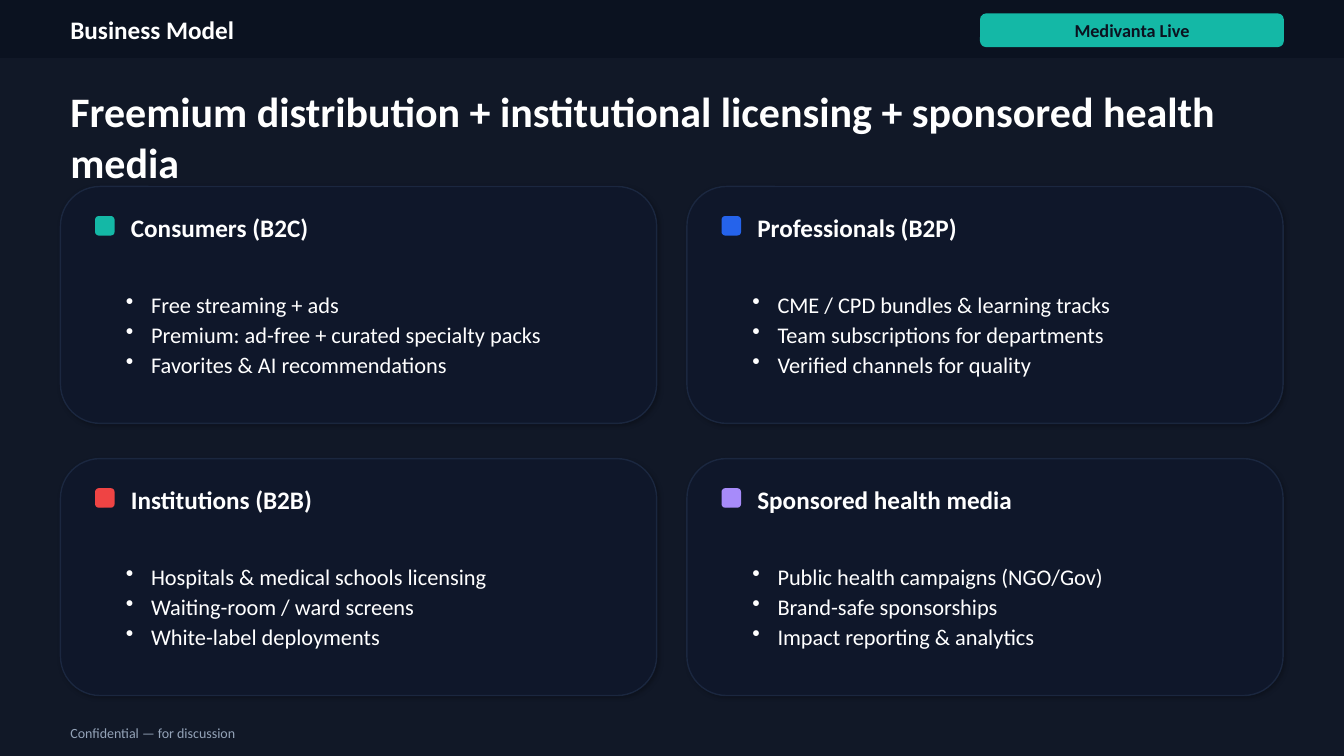
from dataclasses import dataclass

from lxml import etree
from pptx import Presentation
from pptx.dml.color import RGBColor
from pptx.enum.shapes import MSO_SHAPE
from pptx.enum.text import MSO_ANCHOR, PP_ALIGN
from pptx.oxml.ns import qn
from pptx.util import Pt

RECT = MSO_SHAPE.RECTANGLE
ROUND = MSO_SHAPE.ROUNDED_RECTANGLE
MIDDLE = MSO_ANCHOR.MIDDLE
LEFT = PP_ALIGN.LEFT
CENTER = PP_ALIGN.CENTER


@dataclass(frozen=True)
class Theme:
    """Font, colours and type sizes of the slide."""
    font: str = "Calibri"
    bar: str = "0B1220"
    back: str = "111827"
    card: str = "0F172A"
    edge: str = "22314D"
    shade: str = "000000"
    white: str = "FFFFFF"
    muted: str = "94A3B8"
    teal: str = "14B8A6"
    blue: str = "2563EB"
    red: str = "EF4444"
    violet: str = "A78BFA"
    title: int = 30
    head: int = 18
    body: int = 16
    tag: int = 13
    note: int = 10


THEME = Theme()
WIDTH, HEIGHT = 960, 540
BAR = 41.76
EDGE = 43.2
SPAN = 873.36
CARD_W, CARD_H = 425.88, 169.2
CARD_TOP = 133.2
STEP_X, STEP_Y = CARD_W + 21.6, CARD_H + 25.2
INDENT = 18

CARDS = [
    ("Consumers (B2C)", THEME.teal,
     ["Free streaming + ads",
      "Premium: ad-free + curated specialty packs",
      "Favorites & AI recommendations"]),
    ("Professionals (B2P)", THEME.blue,
     ["CME / CPD bundles & learning tracks",
      "Team subscriptions for departments",
      "Verified channels for quality"]),
    ("Institutions (B2B)", THEME.red,
     ["Hospitals & medical schools licensing",
      "Waiting-room / ward screens",
      "White-label deployments"]),
    ("Sponsored health media", THEME.violet,
     ["Public health campaigns (NGO/Gov)",
      "Brand-safe sponsorships",
      "Impact reporting & analytics"]),
]


def add_box(slide, kind, left, top, width, height, fill, line=None):
    """Draw a filled shape whose outline matches its fill by default."""
    box = slide.shapes.add_shape(kind, Pt(left), Pt(top), Pt(width), Pt(height))
    box.shadow.inherit = False
    box.fill.solid()
    box.fill.fore_color.rgb = RGBColor.from_string(fill)
    box.line.color.rgb = RGBColor.from_string(line or fill)
    box.line.width = Pt(1)
    return box


def add_alpha(color, share):
    """Set the opacity of a colour element in percent."""
    etree.SubElement(color, qn("a:alpha"), val=str(share * 1000))


def add_shade(box):
    """Give a shape a soft shadow to the lower right."""
    effects = box._element.spPr.find(qn("a:effectLst"))
    outer = etree.SubElement(
        effects, qn("a:outerShdw"), blurRad=str(Pt(3)), dist=str(Pt(1.5)),
        dir=str(45 * 60000), algn="bl", rotWithShape="0")
    color = etree.SubElement(outer, qn("a:srgbClr"), val=THEME.shade)
    add_alpha(color, 25)


def add_bullet(para):
    """Give a paragraph a hanging bullet."""
    props = para._p.get_or_add_pPr()
    props.set("marL", str(Pt(INDENT)))
    props.set("indent", str(-Pt(INDENT)))
    etree.SubElement(props, qn("a:buChar"), char="•")


def add_text(slide, left, top, width, height, lines, size,
             color=THEME.white, bold=False, align=LEFT, bullets=False):
    """Place lines of text in a box, centred from top to bottom."""
    box = slide.shapes.add_textbox(Pt(left), Pt(top), Pt(width), Pt(height))
    frame = box.text_frame
    frame.word_wrap = True
    frame.vertical_anchor = MIDDLE
    frame.text = "\n".join(lines)
    for para in frame.paragraphs:
        para.alignment = align
        if bullets:
            para.line_spacing = 1.12
            add_bullet(para)
        font = para.font
        font.name = THEME.font
        font.size = Pt(size)
        font.bold = bold
        font.color.rgb = RGBColor.from_string(color)


def add_card(slide, left, top, name, color, points):
    """Draw a card with a colour chip, a heading and bullets."""
    card = add_box(slide, ROUND, left, top, CARD_W, CARD_H, THEME.card, THEME.edge)
    add_alpha(card.line._ln.find(".//" + qn("a:srgbClr")), 65)
    add_shade(card)
    add_box(slide, ROUND, left + 25.2, top + 21.6, 12.96, 12.96, color)
    add_text(slide, left + 43.2, top + 16.56, 368.64, 25.2, [name],
             THEME.head, bold=True)
    add_text(slide, left + 39.6, top + 50.4, 361.44, 108, points,
             THEME.body, bullets=True)


def add_header(slide):
    """Draw the top bar with the section name and the product tag."""
    add_box(slide, RECT, 0, 0, WIDTH, BAR, THEME.bar)
    add_text(slide, EDGE, 8.64, 642.96, 25.2, ["Business Model"],
             THEME.head, bold=True)
    add_box(slide, ROUND, 700.56, 10.08, 216, 23.04, THEME.teal)
    add_text(slide, 700.56, 11.52, 216, 20.16, ["Medivanta Live"],
             THEME.tag, THEME.bar, bold=True, align=CENTER)


def main():
    """Build the slide and save it."""
    deck = Presentation()
    deck.slide_width, deck.slide_height = Pt(WIDTH), Pt(HEIGHT)
    slide = deck.slides.add_slide(deck.slide_layouts[6])
    add_header(slide)
    add_box(slide, RECT, 0, BAR, WIDTH, HEIGHT - BAR, THEME.back)
    add_text(slide, EDGE, 75.6, SPAN, 43.2,
             ["Freemium distribution + institutional licensing"
              " + sponsored health media"],
             THEME.title, bold=True)
    for index, (name, color, points) in enumerate(CARDS):
        row, col = divmod(index, 2)
        add_card(slide, EDGE + col * STEP_X, CARD_TOP + row * STEP_Y,
                 name, color, points)
    add_text(slide, EDGE, 514.8, SPAN, 18, ["Confidential — for discussion"],
             THEME.note, THEME.muted)
    deck.save("out.pptx")


if __name__ == "__main__":
    main()
